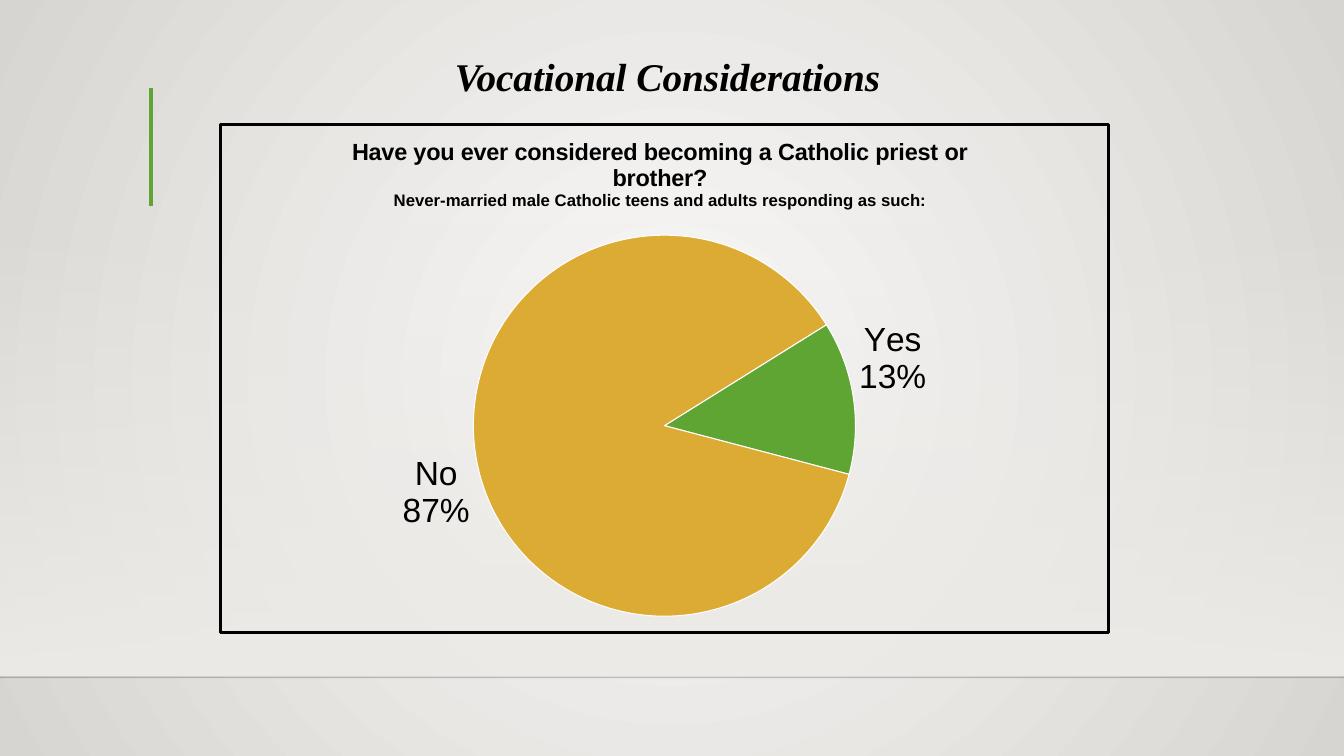
from lxml import etree
from pptx import Presentation
from pptx import util as u
from pptx.chart.data import CategoryChartData
from pptx.dml.color import RGBColor
from pptx.enum import chart as charts, shapes, text
from pptx.oxml import parse_xml
from pptx.oxml.ns import nsdecls, qn

COLORS = {
    "black": "000000", "white": "FFFFFF", "green": "5FA534", "gold": "DCAB34",
    "light": "FAFAF9", "grey": "D7D5D2", "floor": "EDEBE7",
}


def rgb(name):
    return RGBColor.from_string(COLORS[name])


def gradient(stops, direction):
    """Build a gradient from (position, colour, opacity) stops, in percent."""
    marks = "".join(
        f'<a:gs pos="{pos * 1000}"><a:srgbClr val="{COLORS[name]}">'
        f'<a:alpha val="{opacity * 1000}"/></a:srgbClr></a:gs>'
        for pos, name, opacity in stops)
    return parse_xml(f'<a:gradFill {nsdecls("a")} rotWithShape="1">'
                     f'<a:gsLst>{marks}</a:gsLst>{direction}</a:gradFill>')


def set_layout(parent, index, **fractions):
    """Give a chart part a fixed place, as fractions of the chart area."""
    for old in parent.findall(qn("c:layout")):
        parent.remove(old)
    target = '<c:layoutTarget val="inner"/>' if "w" in fractions else ""
    modes = '<c:xMode val="edge"/><c:yMode val="edge"/>'
    sizes = "".join(f'<c:{key} val="{value}"/>' for key, value in fractions.items())
    parent.insert(index, parse_xml(
        f'<c:layout {nsdecls("c")}><c:manualLayout>{target}{modes}{sizes}'
        f'</c:manualLayout></c:layout>'))


class SlideBuilder:
    heading_font = "Times New Roman"
    chart_font = "Arial"

    def __init__(self, page):
        self.page = page

    def background(self, stops):
        self.page.background.fill.solid()
        solid = self.page.background._cSld.find(".//" + qn("a:solidFill"))
        circle = ('<a:path path="circle"><a:fillToRect l="50000" t="50000" '
                  'r="50000" b="50000"/></a:path>')
        solid.getparent().replace(solid, gradient(stops, circle))

    def band(self, left, top, width, height, stops):
        band = self.page.shapes.add_shape(
            shapes.MSO_SHAPE.RECTANGLE, *map(u.Inches, (left, top, width, height)))
        band.shadow.inherit = False
        band.line.fill.background()
        band.fill.solid()
        solid = band._element.spPr.find(qn("a:solidFill"))
        down = '<a:lin ang="5400000" scaled="0"/>'
        solid.getparent().replace(solid, gradient(stops, down))

    def line(self, x1, y1, x2, y2, color, width, opacity=100):
        line = self.page.shapes.add_connector(
            shapes.MSO_CONNECTOR.STRAIGHT, *map(u.Inches, (x1, y1, x2, y2)))
        line.line.color.rgb = rgb(color)
        line.line.width = u.Pt(width)
        properties = line._element.spPr
        shade = properties.find(".//" + qn("a:srgbClr"))
        etree.SubElement(shade, qn("a:alpha")).set("val", str(opacity * 1000))
        etree.SubElement(properties, qn("a:effectLst"))

    def title(self, left, top, width, height, words):
        box = self.page.shapes.add_textbox(*map(u.Inches, (left, top, width, height)))
        frame = box.text_frame
        frame.word_wrap = True
        frame.vertical_anchor = text.MSO_ANCHOR.BOTTOM
        para = frame.paragraphs[0]
        para.text = words
        para.alignment = text.PP_ALIGN.CENTER
        para.line_spacing = 0.9
        self.style(para.font, 28, self.heading_font, bold=True)
        para.font.italic = True

    def style(self, font, size, name, bold=False):
        font.size = u.Pt(size)
        font.name = name
        font.bold = bold
        font.color.rgb = rgb("black")

    def pie(self, left, top, width, height, slices, heading, start):
        data = CategoryChartData(number_format="0")
        data.categories = [name for name, _, _ in slices]
        data.add_series("Series 1", [value for _, value, _ in slices])
        chart = self.page.shapes.add_chart(
            charts.XL_CHART_TYPE.PIE,
            *map(u.Inches, (left, top, width, height)), data).chart
        self.style(chart.font, 14, self.chart_font)
        chart.has_legend = False

        # Heading
        chart.has_title = True
        frame = chart.chart_title.text_frame
        for index, (words, size) in enumerate(heading):
            para = frame.paragraphs[0] if index == 0 else frame.add_paragraph()
            para.text = words
            para.alignment = text.PP_ALIGN.CENTER
            self.style(para.font, size, self.chart_font, bold=True)
        set_layout(chart.chart_title._element, 1, x=0.145, y=0.02)

        # Slices and labels
        plot = chart.plots[0]
        plot.vary_by_categories = True
        series = plot.series[0]
        for index, (_, _, color) in enumerate(slices):
            point = series.points[index].format
            point.fill.solid()
            point.fill.fore_color.rgb = rgb(color)
            point.line.color.rgb = rgb("white")
            point.line.width = u.Pt(0.75)
        labels = series.data_labels
        labels.show_value = False
        labels.show_category_name = True
        labels.show_percentage = True
        labels.number_format = "0%"
        labels.number_format_is_linked = False
        labels.position = charts.XL_LABEL_POSITION.OUTSIDE_END
        self.style(labels.font, 24, self.chart_font)

        # Rotation, place and frame
        etree.SubElement(plot._element, qn("c:firstSliceAng")).set("val", str(start))
        area = chart._chartSpace.find(qn("c:chart"))
        set_layout(area.find(qn("c:plotArea")), 0, x=0.285, y=0.218, w=0.43, h=0.75)
        area.addnext(parse_xml(
            f'<c:spPr {nsdecls("c", "a")}><a:noFill/><a:ln w="{u.Pt(2)}"><a:solidFill>'
            f'<a:srgbClr val="{COLORS["black"]}"/></a:solidFill></a:ln></c:spPr>'))


def main():
    deck = Presentation()
    deck.slide_width, deck.slide_height = u.Inches(13.33), u.Inches(7.5)
    slide = SlideBuilder(deck.slides.add_slide(deck.slide_layouts[6]))

    # Backdrop
    slide.background([(0, "light", 100), (100, "grey", 100)])
    slide.band(0, 2.2, 13.33, 4.5, [(0, "floor", 0), (100, "floor", 100)])
    slide.line(0, 6.72, 13.33, 6.72, "black", 1, opacity=20)
    slide.line(1.5, 0.87, 1.5, 2.04, "green", 3)

    # Title and chart
    slide.title(0.66, 0.42, 11.92, 0.62, "Vocational Considerations")
    slide.pie(
        2.17, 1.22, 8.84, 5.07,
        slices=[("Yes", 13, "green"), ("No", 87, "gold")],
        heading=[
            ("Have you ever considered becoming a Catholic priest or brother?", 16.8),
            ("Never-married male Catholic teens and adults responding as such:", 12),
        ],
        start=58)

    deck.save("out.pptx")


if __name__ == "__main__":
    main()
